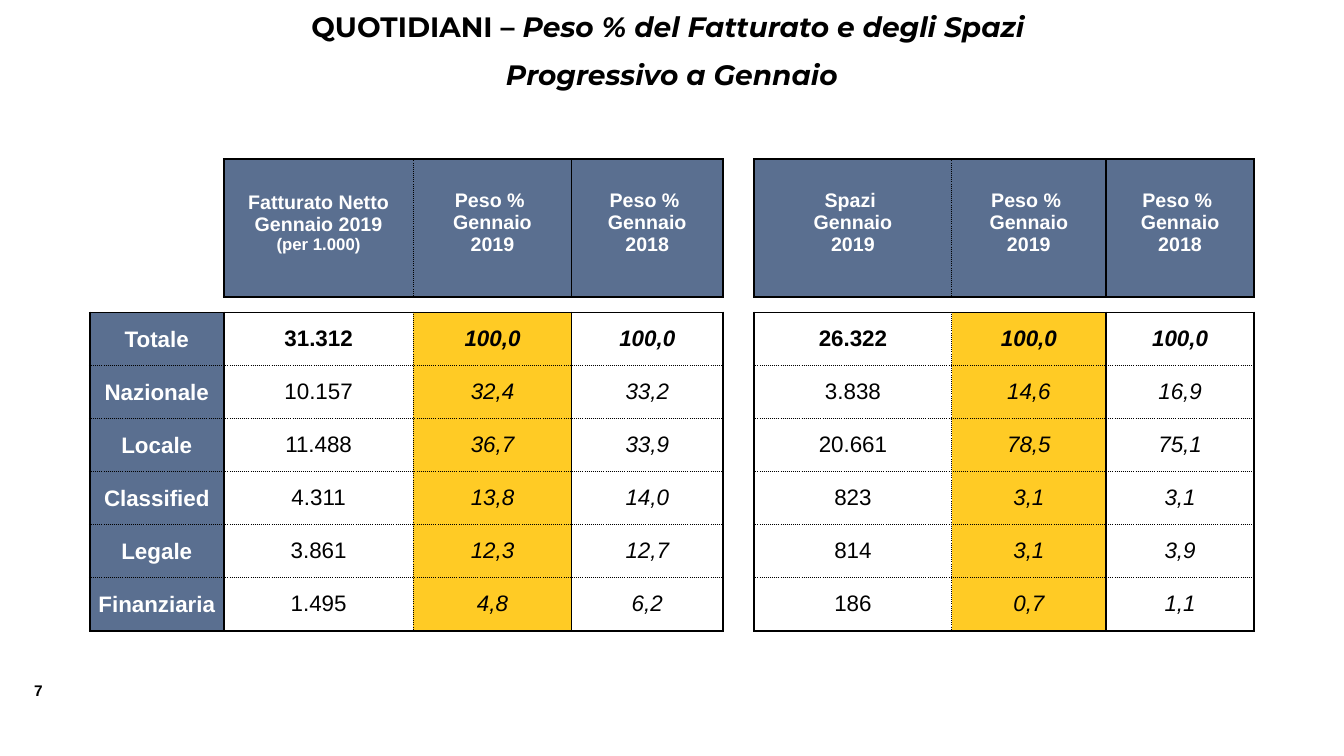
from lxml import etree
from pptx import Presentation
from pptx import util as u
from pptx.dml import color
from pptx.enum import text
from pptx.oxml import ns

WIDTH, HEIGHT = 13.33, 7.5
BLACK, WHITE, BLUE, YELLOW = "000000", "FFFFFF", "5A6F90", "FFCB25"
COLUMNS = [1.33, 1.88, 1.57, 1.5, 0.31, 1.96, 1.53, 1.47]
ROWS = [1.37, 0.15] + [3.16 / 6] * 6
GAP_ROW, GAP_COLUMN = 1, 4
FIRST_BODY_ROW = 2
THICK, THIN, DOTTED = (1.5, "solid"), (1, "solid"), (1, "sysDot")
COLUMN_LINES = [THICK, THICK, DOTTED, THIN, THICK, THICK, DOTTED, THIN, THICK]
ROW_LINES = [THICK] * 3 + [DOTTED] * 5 + [THICK]
PESO_2019 = "Peso % \nGennaio\n2019"
PESO_2018 = "Peso % \nGennaio\n2018"
HEADERS = ["", "Fatturato Netto\nGennaio 2019\n(per 1.000)", PESO_2019, PESO_2018,
           "", "Spazi \nGennaio\n2019", PESO_2019, PESO_2018]
BODY = [
    ["Totale", "31.312", "100,0", "100,0", "", "26.322", "100,0", "100,0"],
    ["Nazionale", "10.157", "32,4", "33,2", "", "3.838", "14,6", "16,9"],
    ["Locale", "11.488", "36,7", "33,9", "", "20.661", "78,5", "75,1"],
    ["Classified", "4.311", "13,8", "14,0", "", "823", "3,1", "3,1"],
    ["Legale", "3.861", "12,3", "12,7", "", "814", "3,1", "3,9"],
    ["Finanziaria", "1.495", "4,8", "6,2", "", "186", "0,7", "1,1"],
]
CELLS = [HEADERS, [""] * len(COLUMNS)] + BODY


def rgb(value):
    return color.RGBColor.from_string(value)


def style_run(r, size, hue=BLACK, bold=True, italic=False, face="Arial"):
    r.font.name = face
    r.font.size = u.Pt(size)
    r.font.bold = bold
    r.font.italic = italic
    r.font.color.rgb = rgb(hue)


def add_text_box(s, left, top, width, height, wrap=True):
    box = s.shapes.add_textbox(u.Inches(left), u.Inches(top), u.Inches(width), u.Inches(height))
    box.text_frame.word_wrap = wrap
    return box.text_frame


def add_title(s):
    tf = add_text_box(s, WIDTH / 8, 0.05, WIDTH * 3 / 4, 0.94)
    tf.text = "QUOTIDIANI – \nProgressivo a Gennaio"
    tf.paragraphs[0].add_run().text = "Peso % del Fatturato e degli Spazi "
    tf.paragraphs[1].space_before = u.Pt(10)
    for p in tf.paragraphs:
        p.alignment = text.PP_ALIGN.CENTER
        for r in p.runs:
            style_run(r, 20, italic=not r.text.startswith("QUOTIDIANI"), face="Montserrat")


def add_page_number(s):
    tf = add_text_box(s, 0.24, 6.71, 0.42, 0.29, wrap=False)
    tf.text = "7"
    style_run(tf.paragraphs[0].runs[0], 11)


def is_framed(row, column):
    inside = 0 <= row < len(ROWS) and 0 <= column < len(COLUMNS)
    return inside and row != GAP_ROW and column != GAP_COLUMN and (row, column) != (0, 0)


def set_border(cell, side, line):
    props = cell._tc.get_or_add_tcPr()
    ln = etree.SubElement(props, ns.qn("a:ln" + side))
    if line is None:
        etree.SubElement(ln, ns.qn("a:noFill"))
        return
    width, dash = line
    ln.set("w", str(u.Pt(width)))
    fill = etree.SubElement(ln, ns.qn("a:solidFill"))
    etree.SubElement(fill, ns.qn("a:srgbClr"), val=BLACK)
    etree.SubElement(ln, ns.qn("a:prstDash"), val=dash)


def set_borders(cell, row, column):
    framed = is_framed(row, column)
    edges = [("L", row, column - 1, COLUMN_LINES[column]),
             ("R", row, column + 1, COLUMN_LINES[column + 1]),
             ("T", row - 1, column, ROW_LINES[row]),
             ("B", row + 1, column, ROW_LINES[row + 1])]
    for side, next_row, next_column, line in edges:
        drawn = framed or is_framed(next_row, next_column)
        set_border(cell, side, line if drawn else None)


def set_fill(cell, row, column):
    if is_framed(row, column) and (row == 0 or column == 0):
        hue = BLUE
    elif row >= FIRST_BODY_ROW and column in (2, 6):
        hue = YELLOW
    else:
        cell.fill.background()
        return
    cell.fill.solid()
    cell.fill.fore_color.rgb = rgb(hue)


def set_cell_text(cell, row, column):
    is_label = row == 0 or column == 0
    side = 0.01 if is_label else 0
    cell.margin_left = cell.margin_right = cell.margin_top = u.Inches(side)
    cell.margin_bottom = u.Inches(0.12 if row == 0 else 0)
    cell.vertical_anchor = text.MSO_ANCHOR.MIDDLE
    tf = cell.text_frame
    tf.text = CELLS[row][column]
    for p in tf.paragraphs:
        p.alignment = text.PP_ALIGN.CENTER
        if not p.runs:
            etree.SubElement(p._p, ns.qn("a:endParaRPr"), sz="400")
        for r in p.runs:
            size = 16 if row else 12 if r.text.startswith("(") else 14
            style_run(r, size, WHITE if is_label else BLACK,
                      bold=is_label or row == FIRST_BODY_ROW,
                      italic=not is_label and column not in (1, 5))


def add_weights_table(s):
    frame = s.shapes.add_table(len(ROWS), len(COLUMNS), u.Inches(0.89), u.Inches(1.58),
                               u.Inches(sum(COLUMNS)), u.Inches(sum(ROWS)))
    table = frame.table
    table.first_row = table.horz_banding = False
    for column, width in enumerate(COLUMNS):
        table.columns[column].width = u.Inches(width)
    for row, height in enumerate(ROWS):
        table.rows[row].height = u.Inches(height)
        for column in range(len(COLUMNS)):
            cell = table.cell(row, column)
            set_borders(cell, row, column)
            set_fill(cell, row, column)
            set_cell_text(cell, row, column)


def main():
    prs = Presentation()
    prs.slide_width, prs.slide_height = u.Inches(WIDTH), u.Inches(HEIGHT)
    s = prs.slides.add_slide(prs.slide_layouts[6])
    add_page_number(s)
    add_title(s)
    add_weights_table(s)
    prs.save("out.pptx")


if __name__ == "__main__":
    main()
